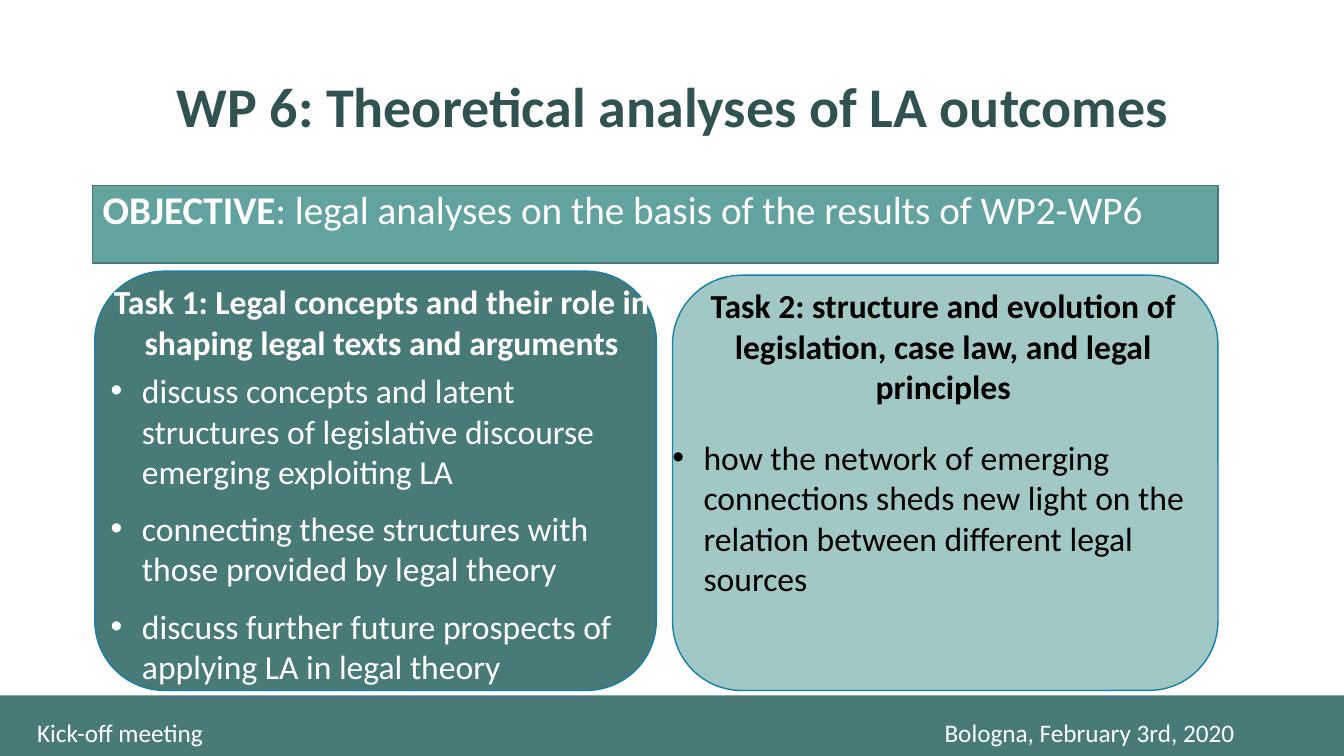
from lxml.etree import SubElement
from pptx import Presentation
from pptx.dml.color import RGBColor
from pptx.enum.shapes import MSO_SHAPE
from pptx.enum.text import MSO_ANCHOR, MSO_AUTO_SIZE, PP_ALIGN
from pptx.oxml.ns import qn
from pptx.util import Inches, Pt

WHITE = RGBColor(0xFF, 0xFF, 0xFF)
BLACK = RGBColor(0, 0, 0)
TITLE_GREEN = RGBColor(0x30, 0x52, 0x50)
DARK_TEAL = RGBColor(0x48, 0x7B, 0x78)
TEAL = RGBColor(0x62, 0xA3, 0x9F)
TEAL_BORDER = RGBColor(0x49, 0x79, 0x76)
PALE_TEAL = RGBColor(0xA1, 0xC8, 0xC5)
BLUE_BORDER = RGBColor(0x15, 0x80, 0xA9)

FONT = "Calibri"
PANEL_TEXT_WIDTH = 5.57


def style(para, size, color, bold=None, align=PP_ALIGN.LEFT):
    para.font.name = FONT
    para.font.size = Pt(size)
    para.font.color.rgb = color
    para.font.bold = bold
    para.alignment = align


def add_filled(page, kind, box, fill, border=None):
    shape = page.shapes.add_shape(kind, *map(Inches, box))
    shape.shadow.inherit = False
    shape.fill.solid()
    shape.fill.fore_color.rgb = fill
    if border is None:
        shape.line.fill.background()
    else:
        shape.line.color.rgb = border
        shape.line.width = Pt(1)
    return shape


def add_text_frame(page, box):
    frame = page.shapes.add_textbox(*map(Inches, box)).text_frame
    frame.word_wrap = True
    return frame


def add_bullet(para):
    properties = para._p.get_or_add_pPr()
    properties.set("marL", str(Inches(0.31)))
    properties.set("indent", str(-Inches(0.31)))
    SubElement(properties, qn("a:buFont")).set("typeface", "Arial")
    SubElement(properties, qn("a:buChar")).set("char", "•")


def add_footer(page, box, left_text, right_text):
    """Draw the bottom band; a tab stop sets the start of the right text."""
    left, top, width, _ = box
    add_filled(page, MSO_SHAPE.RECTANGLE, box, DARK_TEAL)
    frame = add_text_frame(page, (left + 0.27, top + 0.17, width - 0.27, 0.4))
    para = frame.paragraphs[0]
    para.text = f"{left_text}\t{right_text}"
    style(para, 18, WHITE)
    tabs = SubElement(para._p.get_or_add_pPr(), qn("a:tabLst"))
    stop = SubElement(tabs, qn("a:tab"))
    stop.set("pos", str(Inches(9)))
    stop.set("algn", "l")
    # The schema wants tab stops ahead of the default run properties.
    stop.getparent().getnext()
    properties = para._p.pPr
    properties.insert(0, tabs)


def set_title(page, box, text):
    title = page.shapes.title
    title.left, title.top, title.width, title.height = map(Inches, box)
    frame = title.text_frame
    frame.text = text
    frame.word_wrap = True
    frame.auto_size = MSO_AUTO_SIZE.NONE
    frame.vertical_anchor = MSO_ANCHOR.MIDDLE
    para = frame.paragraphs[0]
    style(para, 40, TITLE_GREEN, True, PP_ALIGN.CENTER)
    para.line_spacing = 0.9


def add_objective(page, box, label, text):
    banner = add_filled(page, MSO_SHAPE.RECTANGLE, box, TEAL, TEAL_BORDER)
    frame = banner.text_frame
    frame.word_wrap = True
    frame.vertical_anchor = MSO_ANCHOR.TOP
    para = frame.paragraphs[0]
    style(para, 28, WHITE)
    para.line_spacing = 0.9
    for words, bold in ((label, True), (text, False)):
        span = para.add_run()
        span.text = words
        span.font.bold = bold


def add_task(page, box, text_shift, fill, color, heading, bullets, before, after):
    """Draw a rounded panel with its text; before and after space the bullets."""
    left, top, _, height = box
    add_filled(page, MSO_SHAPE.ROUNDED_RECTANGLE, box, fill, BLUE_BORDER)
    frame = add_text_frame(
        page, (left + text_shift, top + 0.05, PANEL_TEXT_WIDTH, height))
    para = frame.paragraphs[0]
    para.text = heading
    style(para, 24, color, True, PP_ALIGN.CENTER)
    for bullet in bullets:
        para = frame.add_paragraph()
        para.text = bullet
        para.space_before, para.space_after = Pt(before), Pt(after)
        add_bullet(para)
        style(para, 24, color)


def main():
    deck = Presentation()
    deck.slide_width, deck.slide_height = Inches(13.33), Inches(7.5)
    page = deck.slides.add_slide(deck.slide_layouts[5])
    add_footer(page, (0, 6.9, 13.33, 0.6),
               "Kick-off meeting", "Bologna, February 3rd, 2020")
    add_objective(page, (0.92, 1.84, 11.16, 0.77), "OBJECTIVE",
                  ": legal analyses on the basis of the results of WP2-WP6")
    set_title(page, (0.92, 0.65, 11.5, 0.88),
              "WP 6: Theoretical analyses of LA outcomes")
    add_task(page, (0.94, 2.69, 5.57, 4.16), 0.06, DARK_TEAL, WHITE,
             "Task 1: Legal concepts and their role in shaping legal texts "
             "and arguments",
             ["discuss concepts and latent structures of legislative discourse "
              "emerging exploiting LA",
              "connecting these structures with those provided by legal theory",
              "discuss further future prospects of applying LA in legal theory"],
             before=6, after=6)
    add_task(page, (6.67, 2.73, 5.41, 4.12), -0.1, PALE_TEAL, BLACK,
             "Task 2: structure and evolution of legislation, case law, and "
             "legal principles",
             ["how the network of emerging connections sheds new light on the "
              "relation between different legal sources"],
             before=22, after=0)
    deck.save("out.pptx")


if __name__ == "__main__":
    main()
